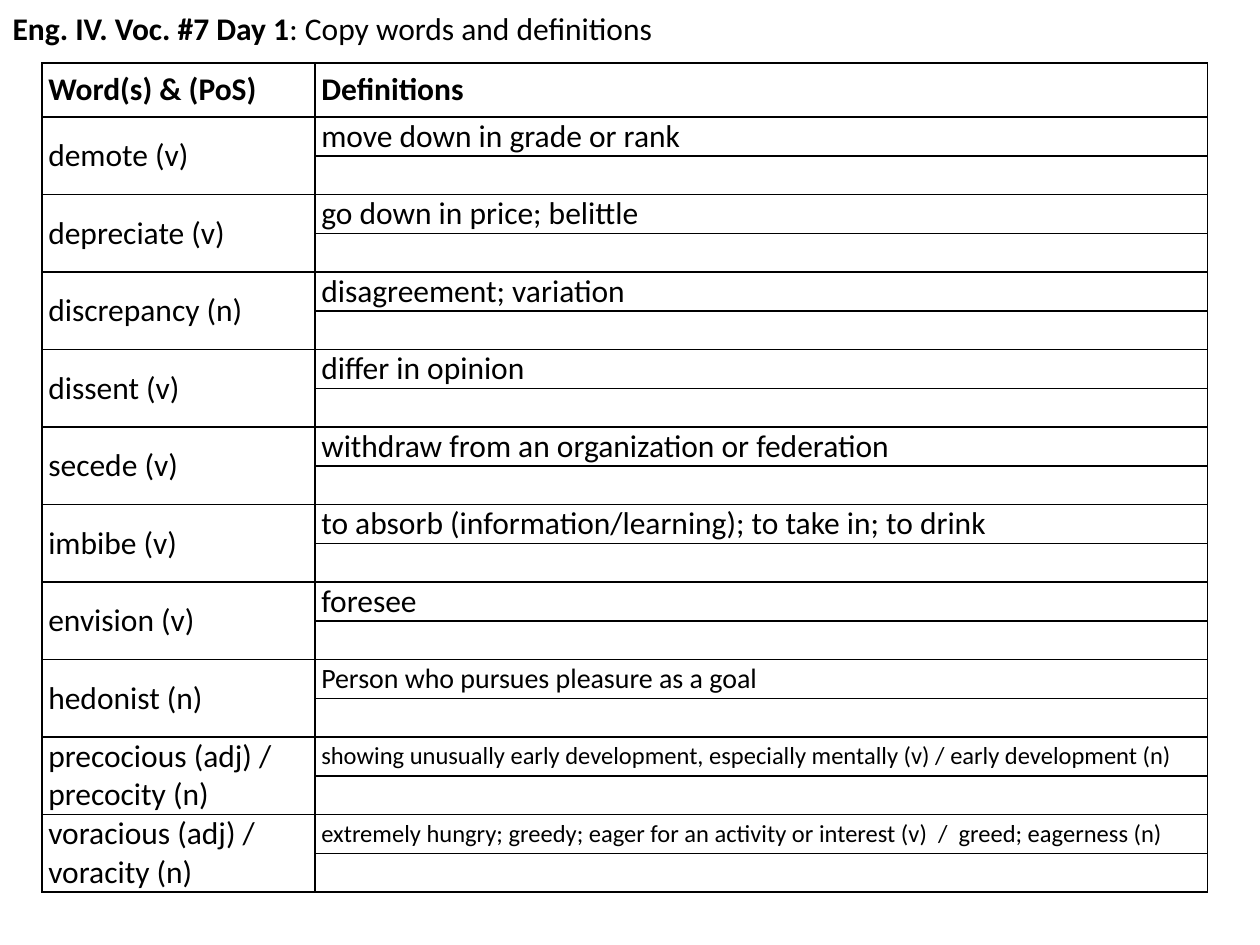
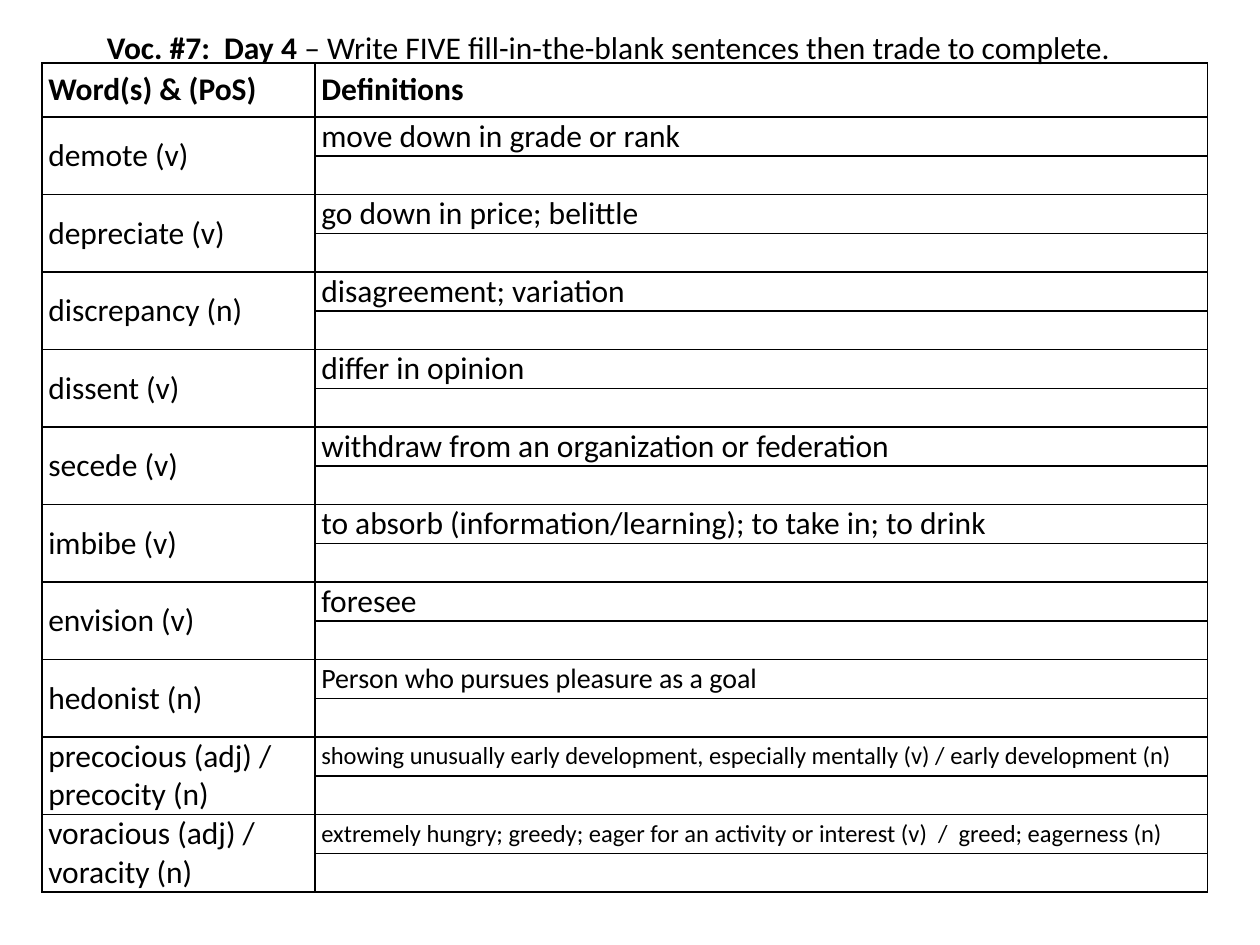
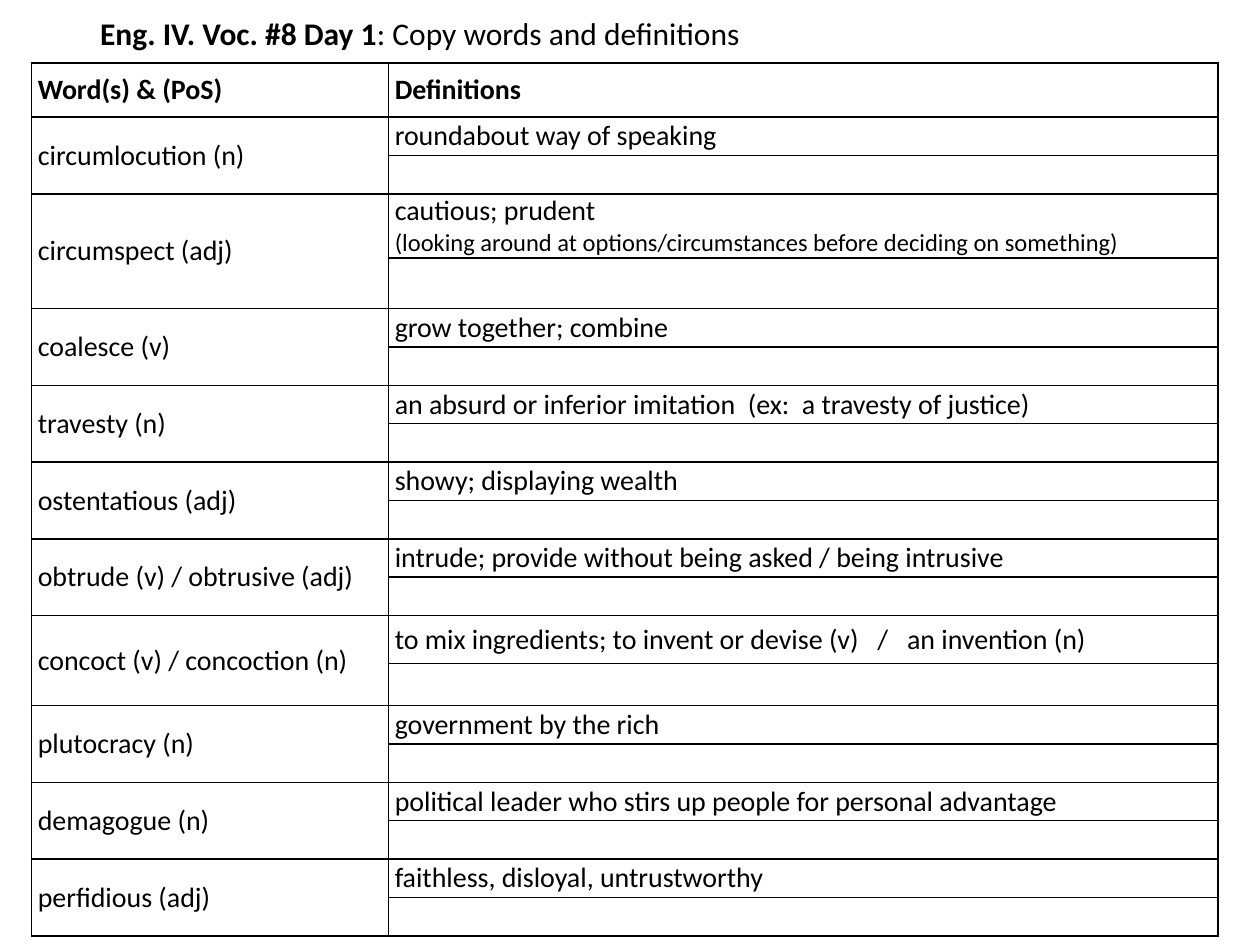
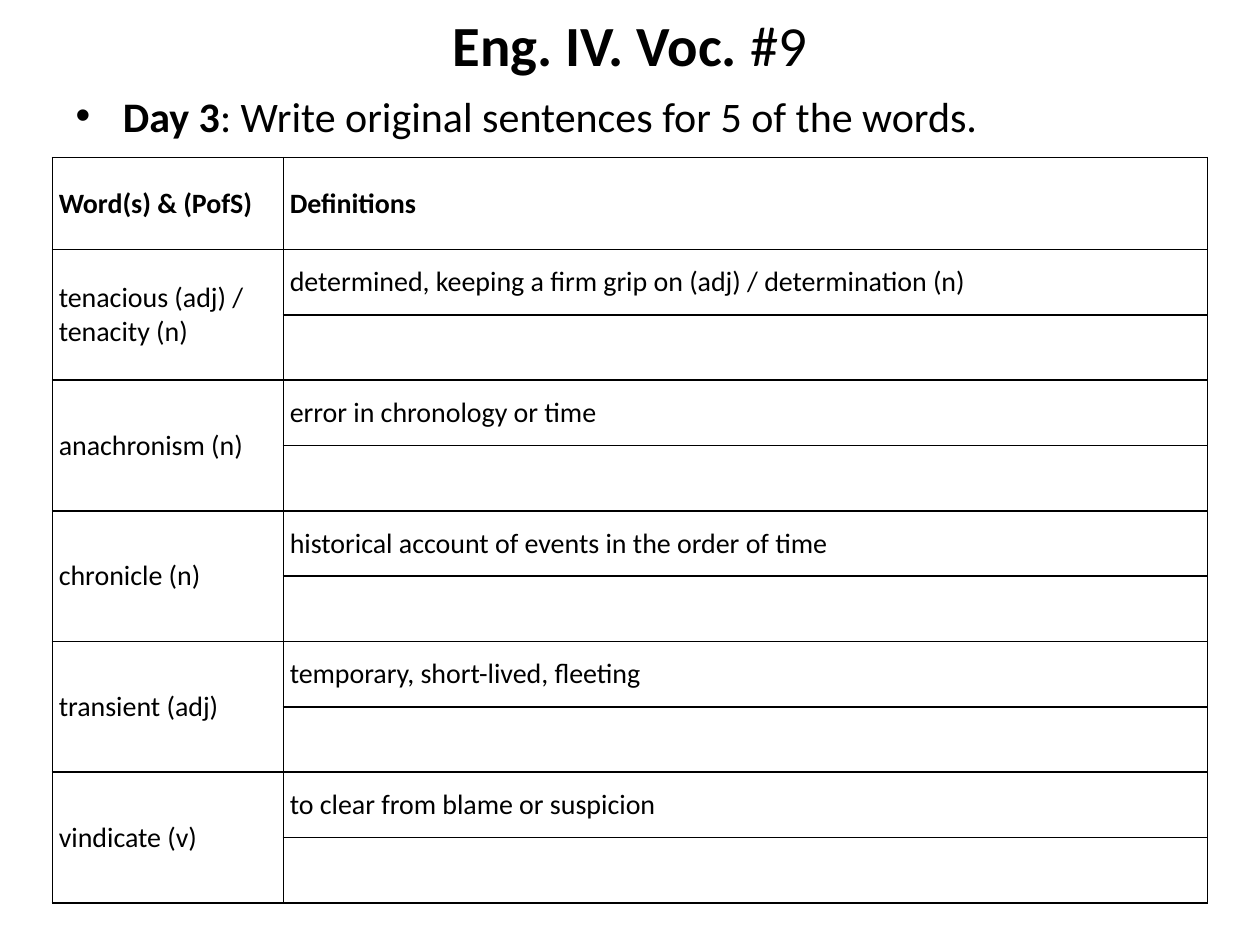
from dataclasses import dataclass
from typing import NamedTuple, Optional

from lxml.etree import SubElement
from pptx import Presentation
from pptx.dml.color import RGBColor
from pptx.enum.text import MSO_ANCHOR as Anchor, MSO_AUTO_SIZE as AutoSize, PP_ALIGN as Align
from pptx.oxml.ns import qn
from pptx.util import Pt

FONT = "Calibri"
INK = "000000"
BORDER_SIDES = ("a:lnL", "a:lnR", "a:lnT", "a:lnB")
TITLE_ONLY, TITLE_AND_BODY, BLANK = 5, 1, 6


class Box(NamedTuple):
    left: float
    top: float
    width: float
    height: float


class Entry(NamedTuple):
    word: str
    definition: str
    size: Optional[float] = None
    note: str = ""
    heights: Optional[tuple[float, float]] = None


@dataclass(frozen=True)
class VocabularyTable:
    left: float
    top: float
    column_widths: tuple[float, float]
    header_height: float
    row_height: float
    size: float
    entries: tuple[Entry, ...]
    word_heading: str = "Word(s) & (PoS)"


VOCABULARY_7 = VocabularyTable(24, 36, (156, 510), 31, 22.14, 18, (
    Entry("demote (v)", "move down in grade or rank"),
    Entry("depreciate (v)", "go down in price; belittle"),
    Entry("discrepancy (n)", "disagreement; variation"),
    Entry("dissent (v)", "differ in opinion"),
    Entry("secede (v)", "withdraw from an organization or federation"),
    Entry("imbibe (v)", "to absorb (information/learning); to take in; to drink"),
    Entry("envision (v)", "foresee"),
    Entry("hedonist (n)", "Person who pursues pleasure as a goal", 16),
    Entry("precocious (adj) / precocity (n)",
          "showing unusually early development, especially mentally (v) / early development (n)", 14),
    Entry("voracious (adj) / voracity (n)",
          "extremely hungry; greedy; eager for an activity or interest (v)  /  greed; eagerness (n)", 14),
))

VOCABULARY_8 = VocabularyTable(18, 36, (204, 474), 31, 21.9, 16, (
    Entry("circumlocution (n)", "roundabout way of speaking"),
    Entry("circumspect (adj)", "cautious; prudent",
          note="(looking around at options/circumstances before deciding on something)",
          heights=(36.6, 28.8)),
    Entry("coalesce (v)", "grow together; combine"),
    Entry("travesty (n)", "an absurd or inferior imitation  (ex:  a travesty of justice)"),
    Entry("ostentatious (adj)", "showy; displaying wealth"),
    Entry("obtrude (v) / obtrusive (adj)", "intrude; provide without being asked / being intrusive"),
    Entry("concoct (v) / concoction (n)",
          "to mix ingredients; to invent or devise (v)   /   an invention (n)", heights=(27.4, 24)),
    Entry("plutocracy (n)", "government by the rich"),
    Entry("demagogue (n)", "political leader who stirs up people for personal advantage"),
    Entry("perfidious (adj)", "faithless, disloyal, untrustworthy"),
))

VOCABULARY_9 = VocabularyTable(30, 90, (132, 528), 52.6, 37.34, 16, (
    Entry("tenacious (adj) /\ntenacity (n)",
          "determined, keeping a firm grip on (adj) / determination (n)"),
    Entry("anachronism (n)", "error in chronology or time"),
    Entry("chronicle (n)", "historical account of events in the order of time"),
    Entry("transient (adj)", "temporary, short-lived, fleeting"),
    Entry("vindicate (v)", "to clear from blame or suspicion"),
), "Word(s) & (PofS)")


def color(value: str) -> RGBColor:
    return RGBColor.from_string(value)


def style_font(font, size: float, bold: Optional[bool] = None) -> None:
    font.name = FONT
    font.size = Pt(size)
    font.color.rgb = color(INK)
    font.bold = bold


def place(shape, box: Box) -> None:
    shape.left, shape.top, shape.width, shape.height = map(Pt, box)


def write_heading(shape, bold_text: str, plain_text: str, size: float):
    shape.text_frame.word_wrap = True
    shape.text_frame.auto_size = AutoSize.NONE
    paragraph = shape.text_frame.paragraphs[0]
    style_font(paragraph.font, size)
    for text, bold in ((bold_text, True), (plain_text, False)):
        run = paragraph.add_run()
        run.text = text
        run.font.bold = bold
    return paragraph


def write_title(slide, box: Box, bold_text: str, plain_text: str, size: float = 18) -> None:
    title = slide.shapes.title
    place(title, box)
    title.text_frame.vertical_anchor = Anchor.MIDDLE
    write_heading(title, bold_text, plain_text, size).alignment = Align.CENTER


def format_cell(cell) -> None:
    cell.margin_left = cell.margin_right = Pt(3.6)
    cell.margin_top = cell.margin_bottom = Pt(0)
    cell.vertical_anchor = Anchor.MIDDLE
    properties = cell._tc.get_or_add_tcPr()
    for side in BORDER_SIDES:
        line = SubElement(properties, qn(side), w=str(Pt(1)))
        fill = SubElement(line, qn("a:solidFill"))
        SubElement(fill, qn("a:srgbClr"), val=INK)
    cell.fill.background()


def write_cell(cell, text: str, size: float, bold: bool = False) -> None:
    cell.text = text
    for paragraph in cell.text_frame.paragraphs:
        style_font(paragraph.font, size, bold)


def add_vocabulary(slide, vocabulary: VocabularyTable) -> None:
    default_heights = (vocabulary.row_height, vocabulary.row_height)
    heights = [vocabulary.header_height]
    for entry in vocabulary.entries:
        heights.extend(entry.heights or default_heights)
    frame = slide.shapes.add_table(
        len(heights), 2, Pt(vocabulary.left), Pt(vocabulary.top),
        Pt(sum(vocabulary.column_widths)), Pt(sum(heights)))
    table = frame.table
    table.first_row = table.horz_banding = False
    for column, width in zip(table.columns, vocabulary.column_widths):
        column.width = Pt(width)
    for row, height in zip(table.rows, heights):
        row.height = Pt(height)
    for cell in table.iter_cells():
        format_cell(cell)

    for index, heading in enumerate((vocabulary.word_heading, "Definitions")):
        write_cell(table.cell(0, index), heading, vocabulary.size, True)
    for index, entry in enumerate(vocabulary.entries):
        row = 1 + 2 * index
        word_cell, definition_cell = table.cell(row, 0), table.cell(row, 1)
        word_cell.merge(table.cell(row + 1, 0))
        write_cell(word_cell, entry.word, vocabulary.size)
        write_cell(definition_cell, entry.definition, entry.size or vocabulary.size)
        if entry.note:
            note = definition_cell.text_frame.add_paragraph()
            note.text = entry.note
            style_font(note.font, 14, False)


def main() -> None:
    presentation = Presentation()
    presentation.slide_width, presentation.slide_height = Pt(720), Pt(540)

    def add_slide(layout: int):
        return presentation.slides.add_slide(presentation.slide_layouts[layout])

    slide = add_slide(TITLE_ONLY)
    write_title(slide, Box(0, 0, 384, 32.4),
                "Eng. IV. Voc. #7 Day 1", ": Copy words and definitions ")
    add_vocabulary(slide, VOCABULARY_7)

    slide = add_slide(BLANK)
    add_vocabulary(slide, VOCABULARY_7)
    instruction = slide.shapes.add_textbox(Pt(18), Pt(12.24), Pt(636), Pt(29))
    instruction.text_frame.vertical_anchor = Anchor.MIDDLE
    paragraph = write_heading(
        instruction, "Voc. #7:  Day 4 ",
        "– Write FIVE fill-in-the-blank sentences then trade to complete.", 18)
    paragraph._p.get_or_add_pPr().set("indent", str(Pt(36)))

    slide = add_slide(TITLE_ONLY)
    write_title(slide, Box(0, 0, 480, 38),
                "Eng. IV. Voc. #8 Day 1", ": Copy words and definitions")
    add_vocabulary(slide, VOCABULARY_8)

    slide = add_slide(TITLE_AND_BODY)
    write_title(slide, Box(36, 0, 648, 50.4), "Eng. IV. Voc. ", "#9", 32.4)
    body = slide.placeholders[1]
    place(body, Box(36, 48, 648, 42))
    write_heading(body, "Day 3", ": Write original sentences for 5 of the words.", 24)
    add_vocabulary(slide, VOCABULARY_9)

    presentation.save("out.pptx")


if __name__ == "__main__":
    main()
